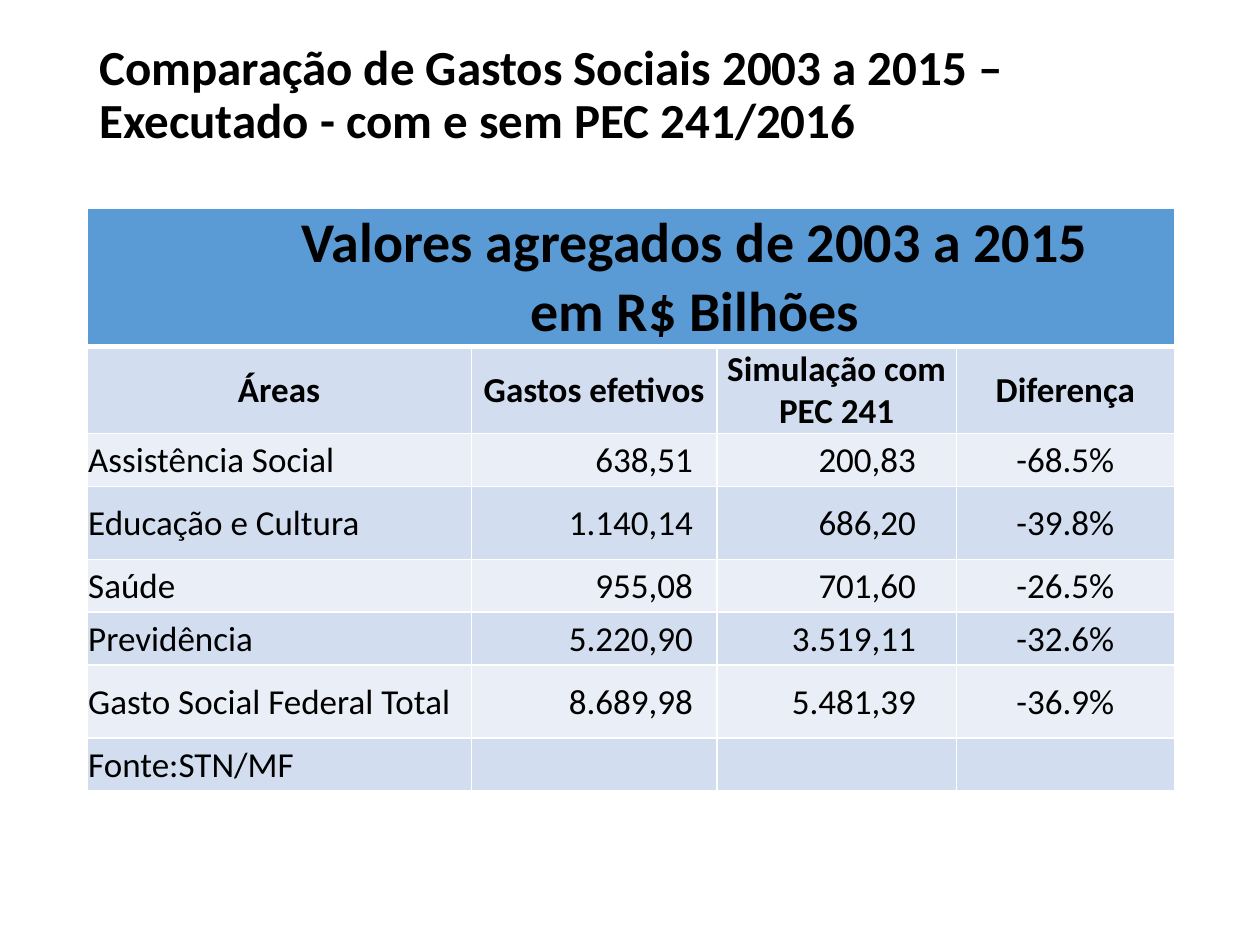
"""Build a slide comparing social spending with and without PEC 241."""
from typing import NamedTuple

from lxml.etree import SubElement
from pptx import Presentation
from pptx.dml.color import RGBColor
from pptx.enum.text import MSO_ANCHOR as Anchor, PP_ALIGN as Align
from pptx.oxml.ns import qn
from pptx.table import _Cell as Cell
from pptx.text.text import TextFrame
from pptx.util import Inches, Pt

FONT = "Calibri"
BLACK, WHITE = "000000", "FFFFFF"
HEADER_BLUE, DARK_BAND, LIGHT_BAND = "5B9BD5", "D2DEEF", "EAEFF7"
LEFT, WIDTH = Inches(0.69), Inches(8.62)
TABLE_TITLE = "Valores agregados de 2003 a 2015\nem R$ Bilhões"
ROW_HEIGHTS = [1.1, 0.69, 0.42, 0.58, 0.42, 0.42, 0.58, 0.42]


class Column(NamedTuple):
    heading: str
    width: float
    align: Align
    right_inset: float


class Spending(NamedTuple):
    area: str
    actual: str = ""
    simulated: str = ""
    difference: str = ""


COLUMNS = [
    Column("Áreas", 3.05, Align.LEFT, 0.01),
    Column("Gastos efetivos", 1.95, Align.RIGHT, 0.19),
    Column("Simulação com PEC 241", 1.9, Align.RIGHT, 0.32),
    Column("Diferença", 1.73, Align.CENTER, 0.01),
]
SPENDINGS = [
    Spending("Assistência Social", "638,51", "200,83", "-68.5%"),
    Spending("Educação e Cultura", "1.140,14", "686,20", "-39.8%"),
    Spending("Saúde", "955,08", "701,60", "-26.5%"),
    Spending("Previdência", "5.220,90", "3.519,11", "-32.6%"),
    Spending("Gasto Social Federal Total", "8.689,98", "5.481,39", "-36.9%"),
    Spending("Fonte:STN/MF"),
]


def color(value: str) -> RGBColor:
    return RGBColor.from_string(value)


def write(frame: TextFrame, text: str, size: int, bold: bool, align: Align) -> None:
    frame.text = text
    for paragraph in frame.paragraphs:
        paragraph.alignment = align
        font = paragraph.font
        font.name, font.size, font.bold = FONT, Pt(size), bold
        font.color.rgb = color(BLACK)


def add_borders(cell: Cell, top: int, bottom: int) -> None:
    properties = cell._tc.get_or_add_tcPr()
    for side, points in {"L": 1, "R": 1, "T": top, "B": bottom}.items():
        line = SubElement(properties, qn(f"a:ln{side}"), w=str(Pt(points)))
        fill = SubElement(line, qn("a:solidFill"))
        SubElement(fill, qn("a:srgbClr"), val=WHITE)


def style_cell(cell: Cell, fill: str, left: float = 0.01, right: float = 0.01,
               top_line: int = 1, bottom_line: int = 1) -> None:
    add_borders(cell, top_line, bottom_line)
    cell.fill.solid()
    cell.fill.fore_color.rgb = color(fill)
    cell.vertical_anchor = Anchor.MIDDLE
    cell.margin_left, cell.margin_right = Inches(left), Inches(right)
    cell.margin_top, cell.margin_bottom = Inches(0.01), Inches(0)


def add_title(slide) -> None:
    frame = slide.shapes.add_textbox(LEFT, Inches(0.04), WIDTH, Inches(1.45)).text_frame
    frame.word_wrap = True
    frame.vertical_anchor = Anchor.MIDDLE
    write(frame, "Comparação de Gastos Sociais 2003 a 2015 – Executado - com e sem PEC 241/2016",
          28, True, Align.LEFT)
    frame.paragraphs[0].line_spacing = 0.9


def add_spending_table(slide) -> None:
    table = slide.shapes.add_table(len(ROW_HEIGHTS), len(COLUMNS), LEFT, Inches(1.65),
                                   WIDTH, Inches(sum(ROW_HEIGHTS))).table
    table.first_row = table.horz_banding = False
    for row, height in zip(table.rows, ROW_HEIGHTS):
        row.height = Inches(height)

    for index, column in enumerate(COLUMNS):
        table.columns[index].width = Inches(column.width)
        style_cell(table.cell(0, index), HEADER_BLUE, left=1.03, bottom_line=3)
        heading = table.cell(1, index)
        style_cell(heading, DARK_BAND, top_line=3)
        write(heading.text_frame, column.heading, 20, True, Align.CENTER)
        for row_index, spending in enumerate(SPENDINGS, start=2):
            cell = table.cell(row_index, index)
            style_cell(cell, DARK_BAND if row_index % 2 else LIGHT_BAND,
                       right=column.right_inset)
            if spending[index]:
                write(cell.text_frame, spending[index], 20, False, column.align)

    table_title = table.cell(0, 0)
    table_title.merge(table.cell(0, len(COLUMNS) - 1))
    write(table_title.text_frame, TABLE_TITLE, 32, True, Align.CENTER)


def main() -> None:
    presentation = Presentation()
    presentation.slide_width, presentation.slide_height = Inches(10), Inches(7.5)
    slide = presentation.slides.add_slide(presentation.slide_layouts[6])
    add_title(slide)
    add_spending_table(slide)
    presentation.save("out.pptx")


if __name__ == "__main__":
    main()
